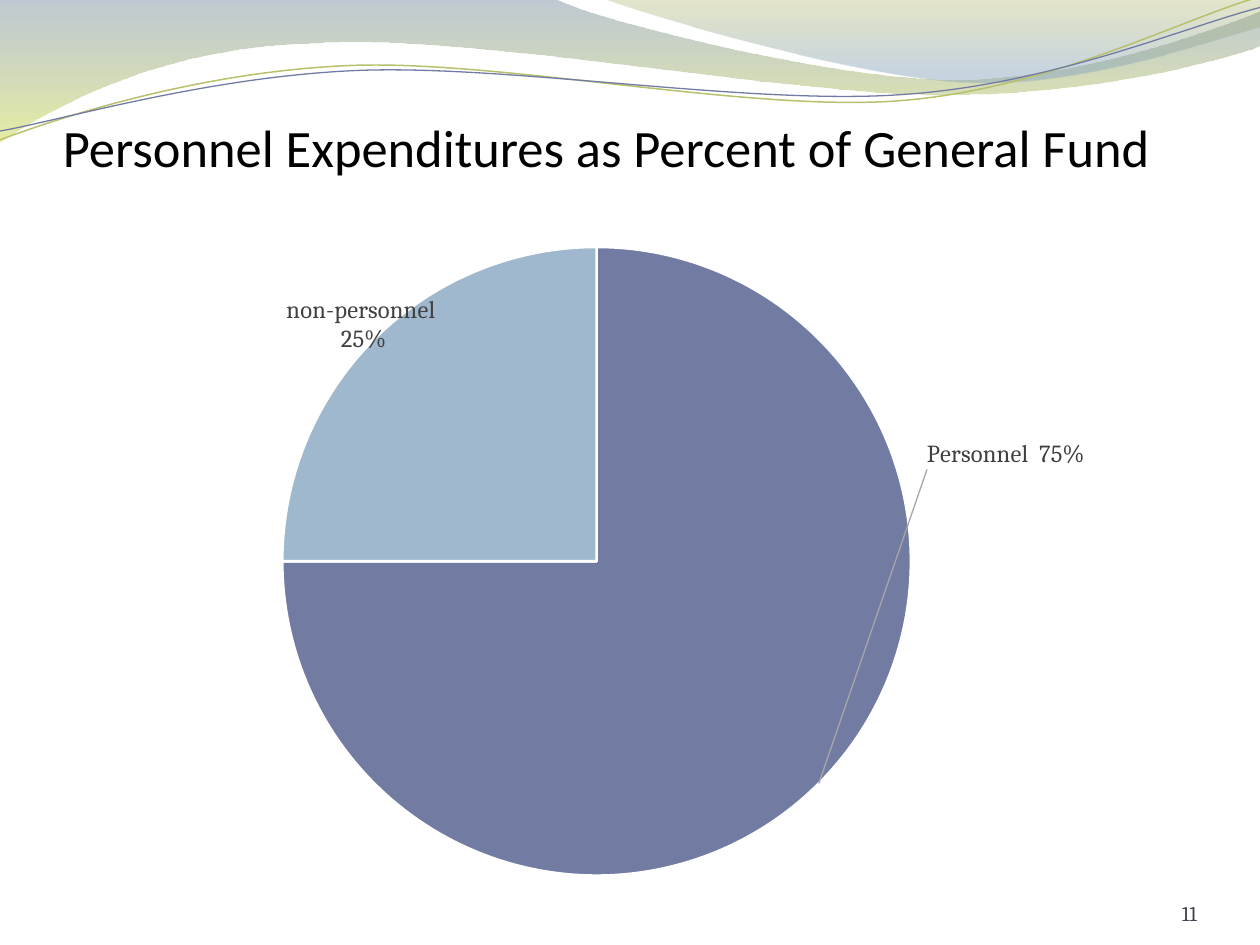
import math
from dataclasses import dataclass

from lxml import etree
from pptx import Presentation
from pptx import util as u
from pptx.chart.data import CategoryChartData
from pptx.dml.color import RGBColor
from pptx.enum import chart as ch
from pptx.enum import text
from pptx.oxml import parse_xml
from pptx.oxml.ns import nsdecls, qn

COLORS = {
    "slate": "72889B", "lime": "D3DE57", "olive": "A4AC50", "mist": "84A3BD",
    "green_line": "B9C06C", "violet": "727CA3", "sky": "9FB8CD",
    "title": "000000", "label": "404040", "number": "43434F",
    "leader": "A6A6A6", "white": "FFFFFF",
}
WAVE_TILT = -2.7


@dataclass
class Stop:
    color: str
    position: float
    opacity: int


@dataclass
class Band:
    """Each segment holds one end point, or two controls and an end point."""
    start: tuple
    segments: list
    stops: list


@dataclass
class Wave:
    start: tuple
    segments: list
    center: tuple
    color: str
    width: float


@dataclass
class Caption:
    words: str
    box: tuple
    size: int
    font: str
    color: str
    align: text.PP_ALIGN
    top_inset: float = 0


@dataclass
class Slice:
    name: str
    value: int
    color: str
    label: str
    label_shift: tuple


BANDS = [
    Band((0, 0), [
        (4.4, -0.01),
        (4.76, 0.17, 6.64, 0.63, 7.58, 0.63),
        (8.53, 0.63, 9.58, 0.26, 10, 0.09),
        (10.01, 0.36),
        (9.83, 0.44, 8.7, 0.76, 7.46, 0.75),
        (6.22, 0.75, 3.82, 0.28, 2.57, 0.34),
        (1.29, 0.36, 0.46, 0.83, -0.01, 1.13),
    ], [Stop("slate", 0, 45), Stop("lime", 1, 55)]),
    Band((4.79, -0.01), [
        (5.09, 0.11, 6.82, 0.62, 7.69, 0.65),
        (8.56, 0.69, 9.61, 0.32, 10, 0.21),
        (10, 0),
    ], [Stop("olive", 0, 30), Stop("mist", 0.8, 45)]),
]
WAVES = [
    Wave((0, 1.11), [
        (0.48, 0.93, 1.58, 0.57, 2.77, 0.52),
        (3.95, 0.47, 5.93, 0.89, 7.13, 0.8),
        (8.33, 0.71, 9.38, 0.15, 9.98, -0.02),
    ], (4.99, 0.57), "green_line", 0.85),
    Wave((0, 1.04), [
        (0.47, 0.96, 1.64, 0.61, 2.83, 0.56),
        (4.03, 0.51, 5.97, 0.84, 7.17, 0.75),
        (8.36, 0.67, 9.41, 0.21, 10, 0.06),
    ], (5, 0.59), "violet", 0.75),
]
CAPTIONS = [
    Caption("Personnel Expenditures as Percent of General Fund",
            (0.5, 0.56, 8.83, 0.85), 30, "Calibri", "title",
            text.PP_ALIGN.LEFT, 0.05),
    Caption("11", (8.67, 6.95, 0.83, 0.4), 12, "Cambria", "number",
            text.PP_ALIGN.RIGHT),
]
SLICES = [
    Slice("Personnel", 75, "violet", "Personnel  75%", (0.1, -0.51)),
    Slice("non-personnel", 25, "sky", "non-personnel  25%", (0.07, 0.03)),
]
CHART_BOX = (0.67, 1.67, 8.17, 5.42)
PIE_BOX = (2.24, 1.96, 4.99, 4.99)


def rgb(name: str) -> RGBColor:
    return RGBColor.from_string(COLORS[name])


def inches(values) -> list:
    return [u.Inches(value) for value in values]


def turn(point: tuple, center: tuple, degrees: float) -> tuple:
    angle = math.radians(degrees)
    dx, dy = point[0] - center[0], point[1] - center[1]
    return (center[0] + dx * math.cos(angle) - dy * math.sin(angle),
            center[1] + dx * math.sin(angle) + dy * math.cos(angle))


def draw_outline(slide, start: tuple, segments: list, close: bool,
                 center: tuple = (0, 0), tilt: float = 0):
    """Draw all points as vertices, then join each control pair into a curve."""
    points = [start] + [s[i:i + 2] for s in segments for i in range(0, len(s), 2)]
    points = [inches(turn(point, center, -tilt)) for point in points]
    builder = slide.shapes.build_freeform(*points[0])
    builder.add_line_segments(points[1:], close=close)
    outline = builder.convert_to_shape()
    outline.shadow.inherit = False
    outline.rotation = tilt
    vertices = iter(list(outline.element.spPr.iter(qn("a:lnTo"))))
    for segment in segments:
        vertex = next(vertices)
        if len(segment) == 6:
            curve = etree.Element(qn("a:cubicBezTo"))
            vertex.addprevious(curve)
            for part in (vertex, next(vertices), next(vertices)):
                curve.append(part[0])
                part.getparent().remove(part)
    return outline


def draw_band(slide, band: Band) -> None:
    outline = draw_outline(slide, band.start, band.segments, True)
    outline.line.fill.background()
    outline.fill.gradient()
    outline.fill.gradient_angle = 270
    for gradient_stop, stop in zip(outline.fill.gradient_stops, band.stops):
        gradient_stop.position = stop.position
        gradient_stop.color.rgb = rgb(stop.color)
    tones = outline.element.spPr.iter(qn("a:srgbClr"))
    for tone, stop in zip(tones, band.stops):
        etree.SubElement(tone, qn("a:alpha"), val=str(stop.opacity * 1000))


def draw_wave(slide, wave: Wave) -> None:
    outline = draw_outline(slide, wave.start, wave.segments, False,
                           wave.center, WAVE_TILT)
    outline.fill.background()
    outline.line.color.rgb = rgb(wave.color)
    outline.line.width = u.Pt(wave.width)


def draw_caption(slide, caption: Caption) -> None:
    frame = slide.shapes.add_textbox(*inches(caption.box)).text_frame
    frame.word_wrap = True
    frame.vertical_anchor = text.MSO_ANCHOR.BOTTOM
    frame.margin_left = frame.margin_right = frame.margin_bottom = 0
    frame.margin_top = u.Inches(caption.top_inset)
    paragraph = frame.paragraphs[0]
    paragraph.alignment = caption.align
    add_run(paragraph, caption.words, caption.size, caption.font, caption.color)


def add_run(paragraph, words: str, size: int, font: str, color: str) -> None:
    run = paragraph.add_run()
    run.text = words
    run.font.size = u.Pt(size)
    run.font.name = font
    run.font.color.rgb = rgb(color)


def set_layout(parent, index: int, **settings) -> None:
    """Give a chart part a manual layout; settings keep the schema order."""
    for old in parent.findall(qn("c:layout")):
        parent.remove(old)
    parts = "".join(f'<c:{key} val="{value}"/>' for key, value in settings.items())
    parent.insert(index, parse_xml(
        f'<c:layout {nsdecls("c")}><c:manualLayout>{parts}'
        "</c:manualLayout></c:layout>"))


def draw_pie(slide) -> None:
    data = CategoryChartData(number_format="0")
    data.categories = [part.name for part in SLICES]
    data.add_series("Series 1", [part.value for part in SLICES])
    pie = slide.shapes.add_chart(
        ch.XL_CHART_TYPE.PIE, *inches(CHART_BOX), data).chart
    pie.has_legend = pie.has_title = False
    pie.font.name, pie.font.size = "Cambria", u.Pt(10)
    pie.font.color.rgb = rgb("title")
    pie.plots[0].vary_by_categories = False
    series = pie.plots[0].series[0]

    # Slices and their labels
    for index, part in enumerate(SLICES):
        point = series.points[index]
        point.format.fill.solid()
        point.format.fill.fore_color.rgb = rgb(part.color)
        point.format.line.color.rgb = rgb("white")
        point.format.line.width = u.Pt(1.5)
        paragraph = point.data_label.text_frame.paragraphs[0]
        add_run(paragraph, part.label, 14, "Cambria", "label")
        point.data_label.position = ch.XL_LABEL_POSITION.OUTSIDE_END
    general = series.data_labels
    general.show_value = general.show_category_name = True
    general.show_percentage = False
    general.font.name, general.font.size = "Cambria", u.Pt(9)
    general.font.color.rgb = rgb("label")

    # Label offsets and leader lines
    labels = general._element
    for label, part in zip(labels.findall(qn("c:dLbl")), SLICES):
        set_layout(label, 1, x=part.label_shift[0], y=part.label_shift[1])
    for old in labels.findall(qn("c:showLeaderLines")):
        labels.remove(old)
    etree.SubElement(labels, qn("c:showLeaderLines"), val="1")
    labels.append(parse_xml(
        f'<c:leaderLines {nsdecls("c", "a")}><c:spPr><a:ln w="9525"><a:solidFill>'
        f'<a:srgbClr val="{COLORS["leader"]}"/></a:solidFill></a:ln></c:spPr>'
        "</c:leaderLines>"))

    # Position of the circle inside the chart
    left, top, width, height = CHART_BOX
    set_layout(pie.plots[0]._element.getparent(), 0,
               layoutTarget="inner", xMode="edge", yMode="edge",
               x=(PIE_BOX[0] - left) / width, y=(PIE_BOX[1] - top) / height,
               w=PIE_BOX[2] / width, h=PIE_BOX[3] / height)


def main() -> None:
    deck = Presentation()
    deck.slide_width, deck.slide_height = inches((10, 7.5))
    slide = deck.slides.add_slide(deck.slide_layouts[6])
    for band in BANDS:
        draw_band(slide, band)
    for wave in WAVES:
        draw_wave(slide, wave)
    for caption in CAPTIONS:
        draw_caption(slide, caption)
    draw_pie(slide)
    deck.save("out.pptx")


if __name__ == "__main__":
    main()
